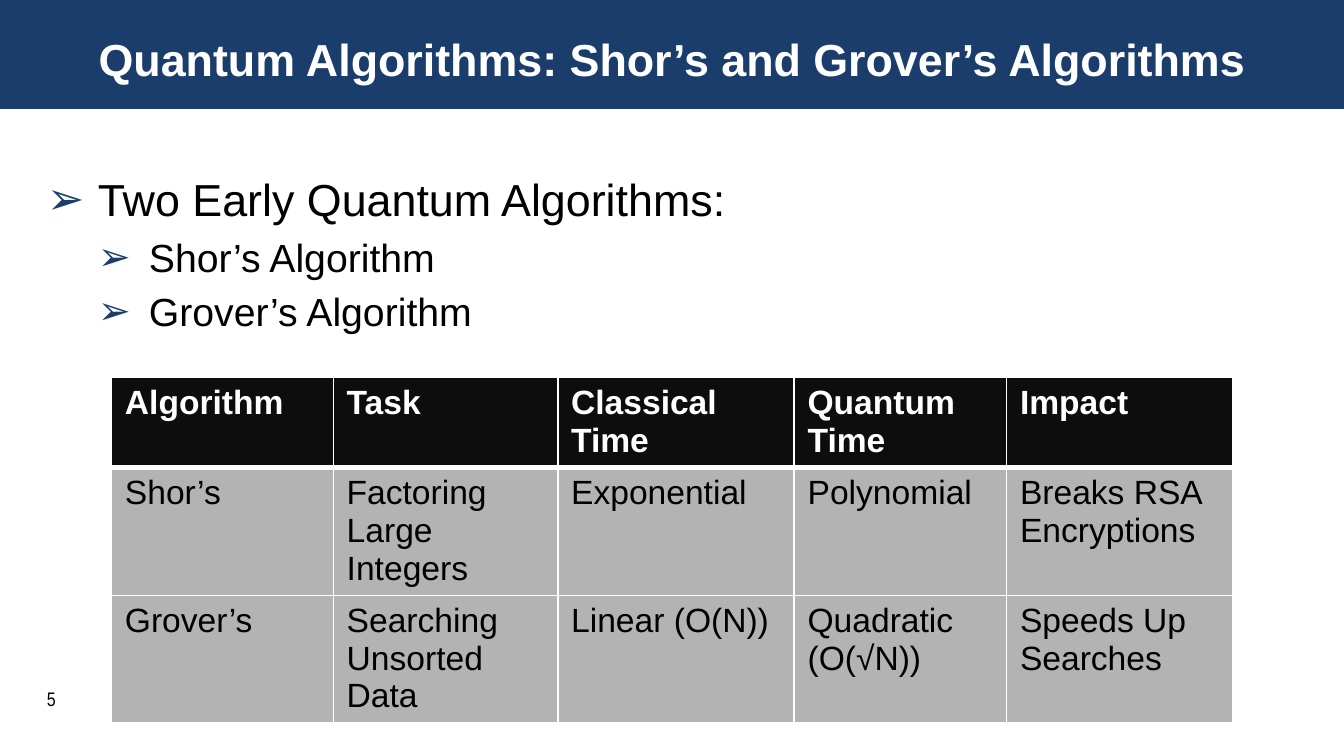
"""Build a slide on Shor's and Grover's quantum algorithms."""
from lxml.etree import SubElement
from pptx import Presentation
from pptx.dml.color import RGBColor as RGB
from pptx.enum.shapes import MSO_SHAPE as SHAPE
from pptx.enum.text import MSO_ANCHOR as ANCHOR, PP_ALIGN as ALIGN
from pptx.oxml.ns import qn
from pptx.util import Inches, Pt

COLORS = {"navy": "1B3D6C", "white": "FFFFFF", "black": "000000",
          "head": "0D0D0D", "gray": "B3B3B3"}
POINTS = [("Two Early Quantum Algorithms:", 0),
          ("Shor’s Algorithm", 1),
          ("Grover’s Algorithm", 1)]
ROWS = [
    ["Algorithm", "Task", "Classical Time", "Quantum Time", "Impact"],
    ["Shor’s", "Factoring Large Integers", "Exponential", "Polynomial",
     "Breaks RSA Encryptions"],
    ["Grover’s", "Searching Unsorted Data", "Linear (O(N))",
     "Quadratic (O(√N))", "Speeds Up Searches"],
]
WIDTHS = [1.65, 1.67, 1.76, 1.58, 1.68]
HEIGHTS = [0.67, 0.41, 0.41]


def color(name):
    return RGB.from_string(COLORS[name])


def style(para, size, ink="black", bold=False, face="Arial"):
    for run in para.runs:
        font = run.font
        font.name, font.size, font.bold = face, Pt(size), bold
        font.color.rgb = color(ink)


def add_bar(slide, *box):
    bar = slide.shapes.add_shape(SHAPE.RECTANGLE, *map(Inches, box))
    bar.shadow.inherit = False
    bar.fill.solid()
    bar.fill.fore_color.rgb = color("navy")
    bar.line.fill.background()


def add_box(slide, *box):
    frame = slide.shapes.add_textbox(*map(Inches, box)).text_frame
    frame.word_wrap = True
    return frame


def add_title(slide, text):
    frame = add_box(slide, 0.25, 0.16, 9.5, 0.56)
    frame.vertical_anchor = ANCHOR.MIDDLE
    frame.text = text
    para = frame.paragraphs[0]
    para.alignment = ALIGN.CENTER
    style(para, 24, "white", True)


def set_bullet(para, level):
    props = para._p.get_or_add_pPr()
    props.set("marL", str(Inches(0.38 * (level + 1))))
    props.set("indent", str(-Inches(0.38)))
    tint = SubElement(props, qn("a:buClr"))
    SubElement(tint, qn("a:srgbClr"), val=COLORS["navy"])
    SubElement(props, qn("a:buFont"), typeface="Arial")
    SubElement(props, qn("a:buChar"), char="➢")


def add_list(slide, points):
    frame = add_box(slide, 0.25, 1.23, 9.5, 3.68)
    for index, (text, level) in enumerate(points):
        para = frame.add_paragraph() if index else frame.paragraphs[0]
        para.text = text
        para.level = level
        set_bullet(para, level)
        if index:
            para.space_before = Pt(4)
        style(para, 21 if level else 24)


def set_edges(cell, widths):
    props = cell._tc.get_or_add_tcPr()
    for side, width in zip("LRTB", widths):
        edge = SubElement(props, qn(f"a:ln{side}"), w=str(Pt(width)))
        fill = SubElement(edge, qn("a:solidFill"))
        SubElement(fill, qn("a:srgbClr"), val=COLORS["white"])


def fill_cell(cell, text, head, below):
    cell.text = text
    cell.margin_bottom = 0
    style(cell.text_frame.paragraphs[0], 18, "white" if head else "black", head)
    set_edges(cell, (1, 1, 3 if below else 1, 3 if head else 1))
    cell.fill.solid()
    cell.fill.fore_color.rgb = color("head" if head else "gray")


def add_grid(slide, rows):
    box = map(Inches, (0.83, 2.81, sum(WIDTHS), sum(HEIGHTS)))
    grid = slide.shapes.add_table(len(rows), len(WIDTHS), *box).table
    for col, width in zip(grid.columns, WIDTHS):
        col.width = Inches(width)
    for index, texts in enumerate(rows):
        grid.rows[index].height = Inches(HEIGHTS[index])
        for cell, text in zip(grid.rows[index].cells, texts):
            fill_cell(cell, text, index == 0, index == 1)


def add_number(slide, text):
    frame = add_box(slide, 0.25, 5.06, 1, 0.19)
    frame.text = text
    style(frame.paragraphs[0], 10.5, face="Arial Narrow")


def main():
    deck = Presentation()
    deck.slide_width, deck.slide_height = Inches(10), Inches(10 * 9 / 16)
    slide = deck.slides.add_slide(deck.slide_layouts[6])
    add_bar(slide, 0, 0, 10, 0.81)
    add_title(slide, "Quantum Algorithms: Shor’s and Grover’s Algorithms")
    add_list(slide, POINTS)
    add_number(slide, "5")
    add_grid(slide, ROWS)
    deck.save("out.pptx")


if __name__ == "__main__":
    main()
